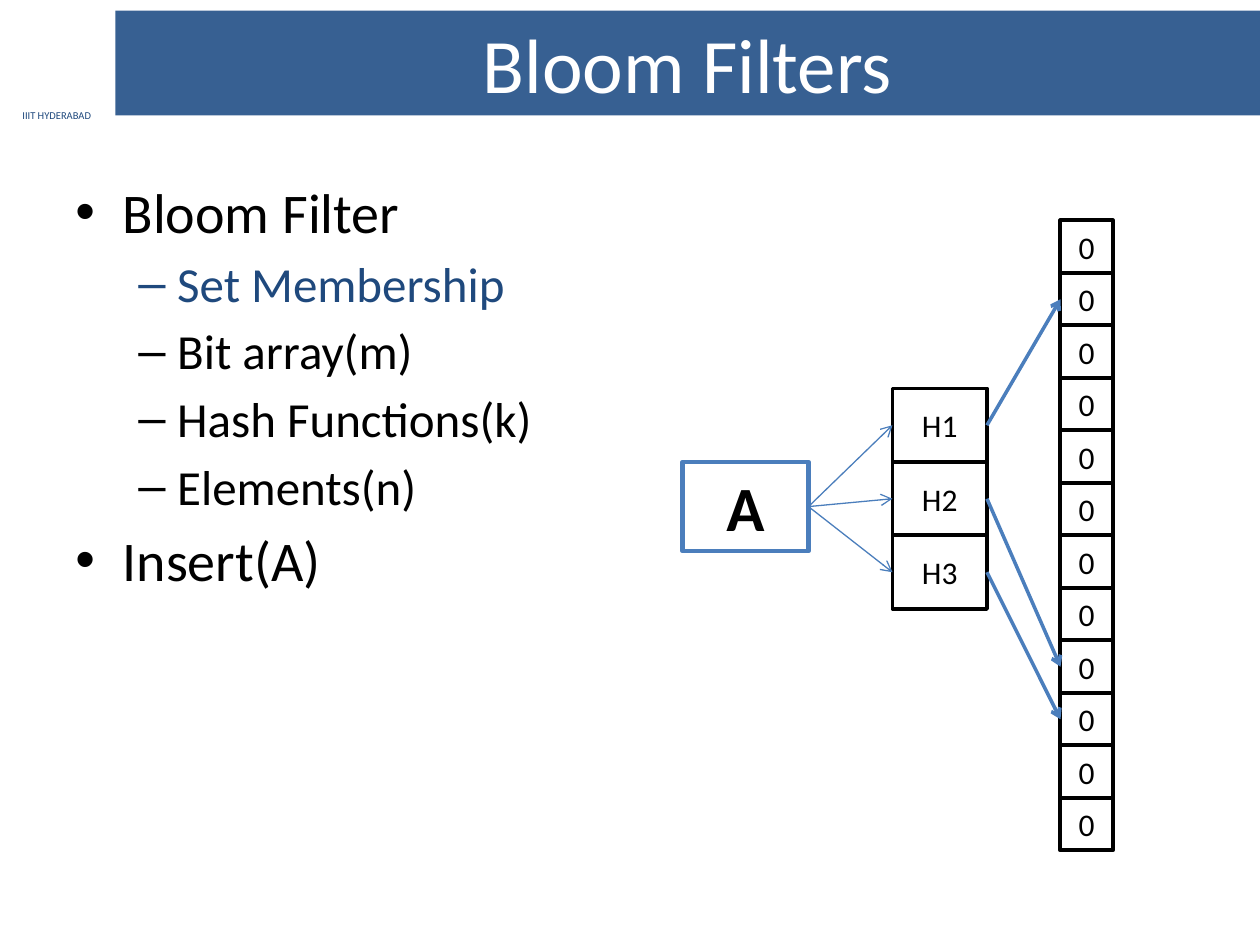
"""Build the Bloom filter slide."""
import lxml.etree
import pptx
import pptx.dml.color
import pptx.enum.shapes
import pptx.enum.text
import pptx.oxml.ns
import pptx.util

RGBColor = pptx.dml.color.RGBColor
Align = pptx.enum.text.PP_ALIGN
Anchor = pptx.enum.text.MSO_ANCHOR

BLACK = RGBColor(0x00, 0x00, 0x00)
WHITE = RGBColor(0xFF, 0xFF, 0xFF)
NAVY = RGBColor(0x1F, 0x49, 0x7D)
BAND = RGBColor(0x37, 0x60, 0x92)
BLUE = RGBColor(0x4B, 0x7E, 0xBC)
SCALE = 7620


def emu(*sizes):
    return [pptx.util.Emu(size * SCALE) for size in sizes]


def child(parent, tag, **attrs):
    return lxml.etree.SubElement(parent, pptx.oxml.ns.qn(tag), **attrs)


class Deck:
    """Hold the style and the current slide."""

    def __init__(self, width, height, face="Calibri"):
        self.face = face
        self.show = pptx.Presentation()
        self.show.slide_width, self.show.slide_height = emu(width, height)
        self.slide = self.show.slides.add_slide(self.show.slide_layouts[5])
        self.shapes = self.slide.shapes

    def style(self, para, size, color, bold=False):
        font = para.font
        font.name = self.face
        font.size = pptx.util.Pt(size)
        font.bold = bold
        font.color.rgb = color

    def title(self, text, x, y, w, h):
        shape = self.shapes.title
        shape.left, shape.top, shape.width, shape.height = emu(x, y, w, h)
        shape.fill.solid()
        shape.fill.fore_color.rgb = BAND
        frame = shape.text_frame
        frame.text = text
        frame.vertical_anchor = Anchor.MIDDLE
        para = frame.paragraphs[0]
        para.alignment = Align.CENTER
        self.style(para, 44, WHITE)

    def box(self, text, x, y, w, h, size=18, color=BLACK, line=BLACK,
            weight=2.25, bold=False):
        shape = self.shapes.add_shape(
            pptx.enum.shapes.MSO_SHAPE.RECTANGLE, *emu(x, y, w, h))
        shape.shadow.inherit = False
        shape.fill.background()
        shape.line.color.rgb = line
        shape.line.width = pptx.util.Pt(weight)
        frame = shape.text_frame
        frame.word_wrap = False
        frame.vertical_anchor = Anchor.MIDDLE
        para = frame.paragraphs[0]
        para.text = text
        para.alignment = Align.CENTER
        self.style(para, size, color, bold)
        return shape

    def list(self, items, x, y, w, h):
        frame = self.shapes.add_textbox(*emu(x, y, w, h)).text_frame
        frame.word_wrap = True
        frame.margin_top = emu(9)[0]
        levels = (("•", 45, 45, 32, 6), ("–", 97, 37, 28, 5))
        for order, (text, level, color) in enumerate(items):
            mark, left, hang, size, gap = levels[level]
            para = frame.paragraphs[0] if order == 0 else frame.add_paragraph()
            para.text = text
            para.level = level
            props = para._p.get_or_add_pPr()
            props.set("marL", str(left * SCALE))
            props.set("indent", str(-hang * SCALE))
            child(props, "a:buFont", typeface="Arial")
            child(props, "a:buChar", char=mark)
            if order:
                para.space_before = pptx.util.Pt(gap)
            self.style(para, size, color)

    def arrow(self, start, end, weight):
        link = self.shapes.add_connector(
            pptx.enum.shapes.MSO_CONNECTOR.STRAIGHT, 0, 0, 0, 0)
        link.begin_connect(start, 3)
        link.end_connect(end, 1)
        link.line.color.rgb = BLUE
        link.line.width = pptx.util.Pt(weight)
        child(link.line._get_or_add_ln(), "a:tailEnd", type="arrow")
        child(link._element.spPr, "a:effectLst")


def main():
    deck = Deck(1200, 900)
    deck.box("IIIT HYDERABAD", 2, 98, 104, 24, 6, NAVY, WHITE, 0.75)
    deck.title("Bloom Filters", 110, 10, 1090, 100)
    deck.list([
        ("Bloom Filter", 0, BLACK),
        ("Set Membership", 1, NAVY),
        ("Bit array(m)", 1, BLACK),
        ("Hash Functions(k)", 1, BLACK),
        ("Elements(n)", 1, BLACK),
        ("Insert(A)", 0, BLACK),
    ], 60, 160, 1080, 650)

    bits = [deck.box("0", 1010, 210 + 50 * row, 50, 50) for row in range(12)]
    hashes = [deck.box(f"H{row + 1}", 850, 370 + 70 * row, 90, 70)
              for row in range(3)]
    item = deck.box("A", 650, 440, 120, 85, 36, line=BLUE, weight=2.5,
                    bold=True)
    for node in hashes:
        deck.arrow(item, node, 0.75)
    for node, index in zip(hashes, (1, 8, 9)):
        deck.arrow(node, bits[index], 2)
    deck.show.save("out.pptx")


if __name__ == "__main__":
    main()
